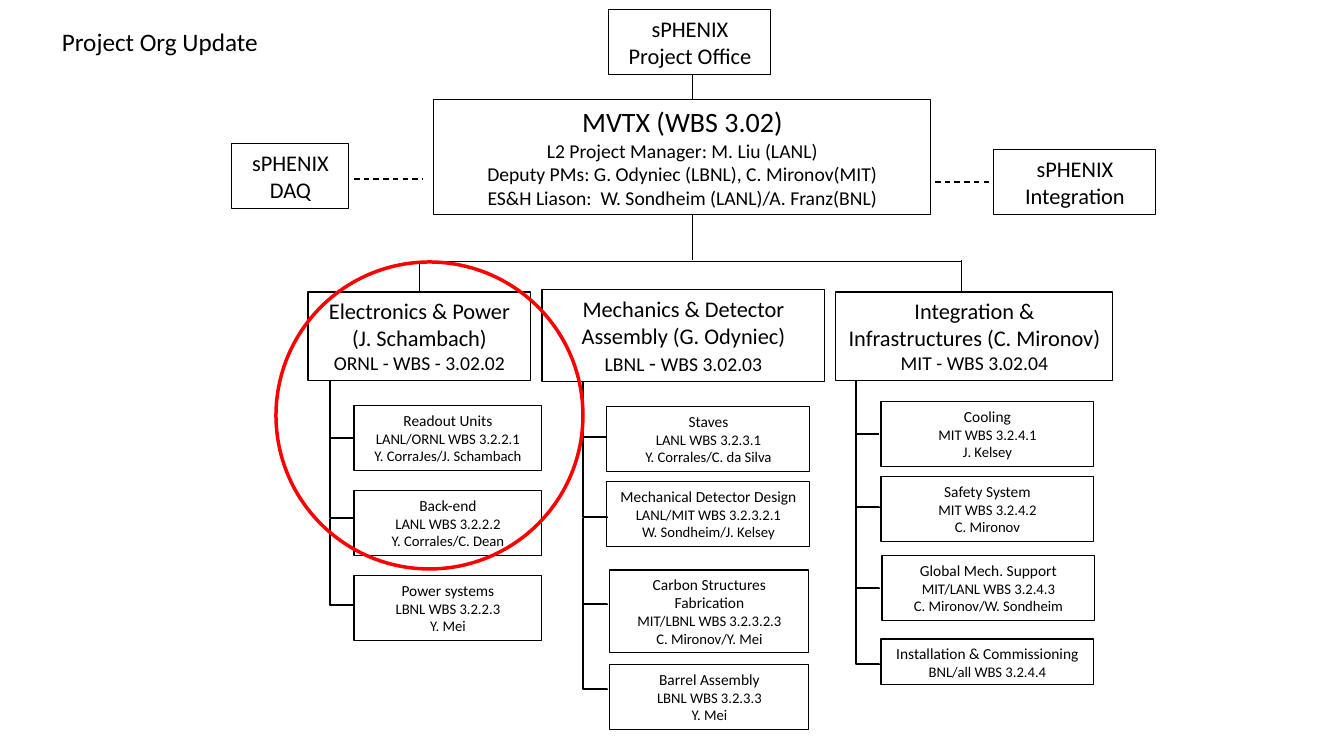
import pptx
import pptx.util
import pptx.dml.color
import pptx.enum.dml
import pptx.enum.shapes
import pptx.enum.text
import pptx.oxml

PX = 914400 / 100.8
COLORS = {"ink": "000000", "highlight": "FF0000"}
FONT = "Calibri"
THIN, MEDIUM, THICK = 0.75, 1, 2.5
DROP = 87  # height of every elbow after the first in a branch

# Boxes are (left, top, width, height) in px; a line of text is a list of (text, size) runs.
TITLE = ((52, 21, 224, 40), [[("Project Org Update", 18)]])
TOP_BOXES = [
    ((609, 10, 162, 65), [[("sPHENIX Project Office", 16)]]),
    ((434, 100, 497, 115), [
        [("MVTX (WBS 3.02)", 20)],
        [("L2 Project Manager: M. Liu (LANL)", 14)],
        [("Deputy PMs: G. Odyniec (LBNL), C. Mironov(MIT)", 14)],
        [("ES&H Liason:  W. Sondheim (LANL)/A. Franz(BNL)", 14)],
    ]),
    ((232, 144, 117, 65), [[("sPHENIX DAQ", 16)]]),
    ((994, 150, 162, 65), [[("sPHENIX Integration", 16)]]),
]
# Each work package: box, y of its branch, lines of text
BRANCHES = [
    {
        "box": (308, 292, 223, 89), "trunk": 330, "branch_end": 354,
        "heading": [[("Electronics & Power", 16)], [("(J. Schambach)", 16)],
                    [("ORNL - WBS - 3.02.02", 14)]],
        "packages": [
            ((354, 406, 188, 65), 438,
             ["Readout Units", "LANL/ORNL WBS 3.2.2.1", "Y. CorraJes/J. Schambach"]),
            ((354, 491, 188, 65), 519, ["Back-end", "LANL WBS 3.2.2.2", "Y. Corrales/C. Dean"]),
            ((354, 576, 188, 65), 606, ["Power systems", "LBNL WBS 3.2.2.3", "Y. Mei"]),
        ],
    },
    {
        "box": (542, 290, 283, 92), "trunk": 583, "branch_end": 607,
        "heading": [[("Mechanics & Detector Assembly (G. Odyniec)", 16)],
                    [("LBNL ", 14), ("- ", 16), ("WBS 3.02.03", 14)]],
        "packages": [
            ((607, 407, 203, 65), 437, ["Staves", "LANL WBS 3.2.3.1", "Y. Corrales/C. da Silva"]),
            ((607, 482, 203, 65), 518,
             ["Mechanical Detector Design", "LANL/MIT WBS 3.2.3.2.1", "W. Sondheim/J. Kelsey"]),
            ((610, 570, 199, 83), 605,
             ["Carbon Structures Fabrication", "MIT/LBNL WBS 3.2.3.2.3", "C. Mironov/Y. Mei"]),
            ((610, 665, 199, 65), 690, ["Barrel Assembly", "LBNL WBS 3.2.3.3", "Y. Mei"]),
        ],
    },
    {
        "box": (836, 292, 277, 89), "trunk": 856, "branch_end": 879,
        "heading": [[("Integration & Infrastructures (C. Mironov)", 16)],
                    [("MIT - WBS 3.02.04", 14)]],
        "packages": [
            ((881, 402, 213, 65), 434, ["Cooling", "MIT WBS 3.2.4.1", "J. Kelsey"]),
            ((881, 477, 213, 65), 508, ["Safety System", "MIT WBS 3.2.4.2", "C. Mironov"]),
            ((882, 556, 213, 65), 589,
             ["Global Mech. Support", "MIT/LANL WBS 3.2.4.3", "C. Mironov/W. Sondheim"]),
            ((881, 639, 213, 46), 665, ["Installation & Commissioning", "BNL/all WBS 3.2.4.4"]),
        ],
    },
]
# Lines are (x1, y1, x2, y2)
TOP_LINES = [(693, 75, 693, 100), (693, 215, 693, 260), (962, 260, 962, 291)]
BUS = (419, 291, 962, 262)
DASHED_LINES = [(354, 179, 423, 179), (935, 182, 992, 182)]
HIGHLIGHT = (276, 262, 307, 307)


def px(*lengths):
    return [pptx.util.Emu(round(length * PX)) for length in lengths]


def rgb(name):
    return pptx.dml.color.RGBColor.from_string(COLORS[name])


def write(shape, lines, alignment):
    frame = shape.text_frame
    for index, runs in enumerate(lines):
        paragraph = frame.paragraphs[0] if index == 0 else frame.add_paragraph()
        paragraph.alignment = alignment
        paragraph.font.name = FONT
        paragraph.font.color.rgb = rgb("ink")
        paragraph.font.size = pptx.util.Pt(runs[0][1])
        for text, size in runs:
            run = paragraph.add_run()
            run.text = text
            if size != runs[0][1]:
                run.font.size = pptx.util.Pt(size)


def add_outline(slide, kind, box, color, width):
    shape = slide.shapes.add_shape(kind, *px(*box))
    shape.shadow.inherit = False
    shape.fill.background()
    shape.line.color.rgb = rgb(color)
    shape.line.width = pptx.util.Pt(width)
    return shape


def add_box(slide, box, lines):
    shape = add_outline(slide, pptx.enum.shapes.MSO_SHAPE.RECTANGLE, box, "ink", THIN)
    shape.text_frame.word_wrap = True
    shape.text_frame.vertical_anchor = pptx.enum.text.MSO_ANCHOR.TOP
    write(shape, lines, pptx.enum.text.PP_ALIGN.CENTER)


def add_line(slide, ends, width, kind=pptx.enum.shapes.MSO_CONNECTOR.STRAIGHT):
    connector = slide.shapes.add_connector(kind, *px(*ends))
    connector.line.color.rgb = rgb("ink")
    connector.line.width = pptx.util.Pt(width)
    properties = connector._element.spPr
    properties.append(properties.makeelement(pptx.oxml.ns.qn("a:effectLst"), {}))
    return connector


def add_elbow(slide, ends, width, bends=1):
    """Connect two points, leaving the first vertically and turning right near the second."""
    x1, y1, x2, y2 = ends
    across, along = x2 - x1, abs(y2 - y1)
    connector = add_line(slide, ends, width, pptx.enum.shapes.MSO_CONNECTOR.ELBOW)
    # The preset starts horizontally, so its frame is turned a quarter about its centre.
    connector.left, connector.top, connector.width, connector.height = px(
        (x1 + x2 - along) / 2, (y1 + y2 - across) / 2, along, across)
    frame = connector._element.spPr.find(pptx.oxml.ns.qn("a:xfrm"))
    for flip in ("flipH", "flipV"):
        frame.attrib.pop(flip, None)
    frame.set("flipH", "1")
    if y2 > y1:
        frame.set("rot", "16200000")
    else:
        frame.set("rot", "5400000")
        frame.set("flipV", "1")
    geometry = connector._element.spPr.find(pptx.oxml.ns.qn("a:prstGeom"))
    geometry.set("prst", f"bentConnector{bends + 1}")
    if bends == 2:
        adjustments = geometry.find(pptx.oxml.ns.qn("a:avLst"))
        guide = adjustments.makeelement(
            pptx.oxml.ns.qn("a:gd"), {"name": "adj1", "fmla": "val 99000"})
        adjustments.append(guide)


def add_branch(slide, branch):
    """Draw a heading box and the work packages hanging from its trunk."""
    top, height = branch["box"][1], branch["box"][3]
    add_box(slide, branch["box"], branch["heading"])
    trunk, end = branch["trunk"], branch["branch_end"]
    for index, (box, y, (name, *details)) in enumerate(branch["packages"]):
        add_box(slide, box, [[(name, 11)]] + [[(detail, 10.5)] for detail in details])
        start_y = y - DROP if index else top + height
        add_elbow(slide, (trunk, start_y, end, y), MEDIUM, bends=2 if index else 1)


def main():
    presentation = pptx.Presentation()
    presentation.slide_width, presentation.slide_height = px(1344, 756)
    slide = presentation.slides.add_slide(presentation.slide_layouts[6])

    for branch in BRANCHES:
        add_branch(slide, branch)
    for box, lines in TOP_BOXES:
        add_box(slide, box, lines)
    add_elbow(slide, BUS, THIN)
    for ends in TOP_LINES:
        add_line(slide, ends, THIN)
    for ends in DASHED_LINES:
        add_line(slide, ends, MEDIUM).line.dash_style = pptx.enum.dml.MSO_LINE.DASH

    title_box, title_lines = TITLE
    title = slide.shapes.add_textbox(*px(*title_box))
    title.text_frame.word_wrap = False
    write(title, title_lines, pptx.enum.text.PP_ALIGN.LEFT)
    add_outline(slide, pptx.enum.shapes.MSO_SHAPE.OVAL, HIGHLIGHT, "highlight", THICK)

    presentation.save("out.pptx")


if __name__ == "__main__":
    main()
